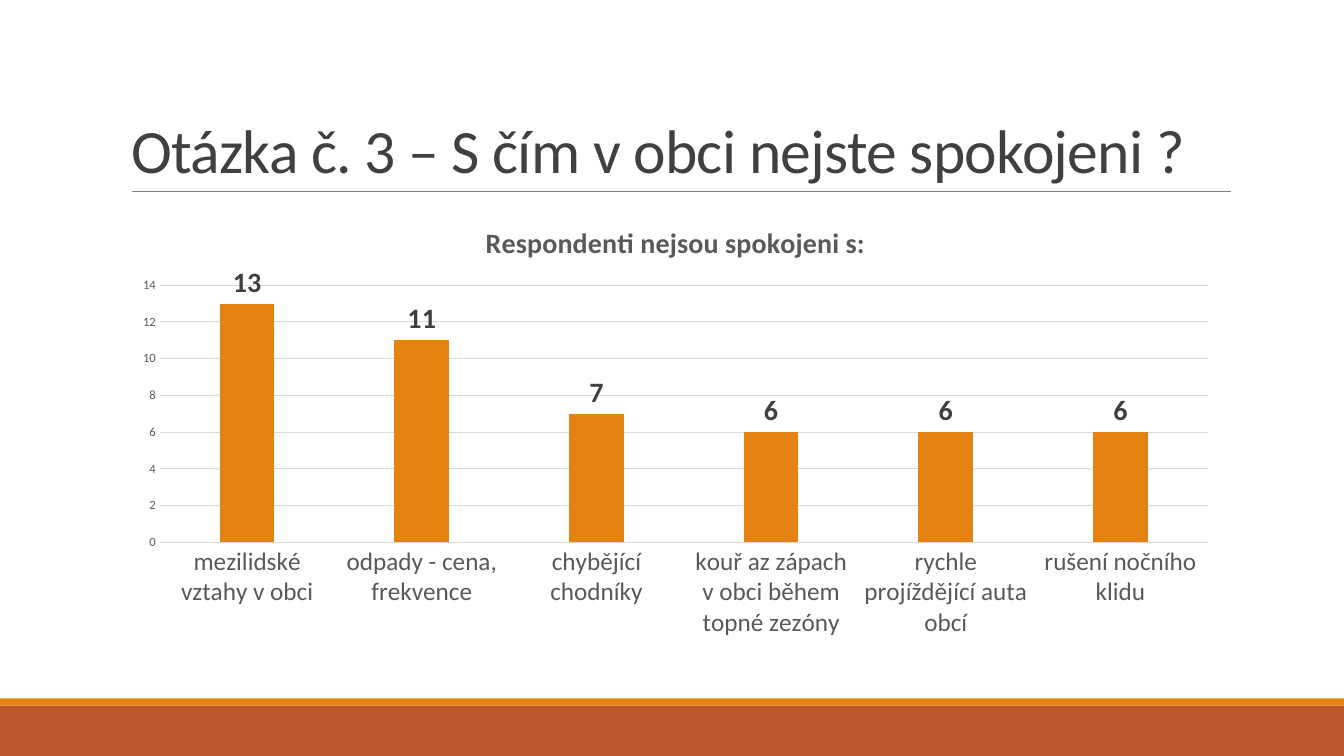
from lxml import etree
from pptx import Presentation
from pptx.chart.data import CategoryChartData
from pptx.dml.color import RGBColor
from pptx.enum.chart import XL_CHART_TYPE, XL_LABEL_POSITION, XL_TICK_MARK
from pptx.enum.shapes import MSO_CONNECTOR, MSO_SHAPE
from pptx.enum.text import MSO_ANCHOR, PP_ALIGN
from pptx.oxml import parse_xml
from pptx.oxml.ns import nsdecls, qn
from pptx.util import Inches, Pt

COLUMNS = XL_CHART_TYPE.COLUMN_CLUSTERED
OUTSIDE_END = XL_LABEL_POSITION.OUTSIDE_END
NO_TICKS = XL_TICK_MARK.NONE
RECTANGLE = MSO_SHAPE.RECTANGLE
STRAIGHT = MSO_CONNECTOR.STRAIGHT

ORANGE, RUST = "E48312", "BD582C"
DARK, GRAY, LIGHT, RULE = "404040", "595959", "D9D9D9", "808080"
LEFT, CONTENT_WIDTH = 1.2, 11
TITLE_TOP, TITLE_BOTTOM = 0.31, 1.9
SLIDE_WIDTH, SLIDE_HEIGHT = 13.33, 7.5

color = RGBColor.from_string


def format_font(font, size, hex_color, bold=False):
    font.name = "Calibri"
    font.size = Pt(size)
    font.bold = bold
    font.color.rgb = color(hex_color)


def write_text(text_frame, text, spacing=0, line_spacing=1.0, align=PP_ALIGN.LEFT, **font_format):
    """Fill the frame with one formatted paragraph; spacing is in points."""
    text_frame.text = text
    paragraph = text_frame.paragraphs[0]
    paragraph.alignment = align
    paragraph.line_spacing = line_spacing
    run = paragraph.runs[0]
    format_font(run.font, **font_format)
    if spacing:
        run.font._element.set("spc", str(round(spacing * 100)))


presentation = Presentation()
presentation.slide_width = Inches(SLIDE_WIDTH)
presentation.slide_height = Inches(SLIDE_HEIGHT)
slide = presentation.slides.add_slide(presentation.slide_layouts[5])

# Footer bands
for top, height, fill in ((7, 0.5, RUST), (6.93, 0.07, ORANGE)):
    band = slide.shapes.add_shape(
        RECTANGLE, 0, Inches(top), presentation.slide_width, Inches(height))
    band.shadow.inherit = False
    band.fill.solid()
    band.fill.fore_color.rgb = color(fill)
    band.line.fill.background()

# Title and its rule
rule_y = Inches(TITLE_BOTTOM)
rule = slide.shapes.add_connector(STRAIGHT, Inches(1.31), rule_y, Inches(12.21), rule_y)
rule.line.color.rgb = color(RULE)
rule.line.width = Pt(0.5)
etree.SubElement(rule._element.spPr, qn("a:effectLst"))

title = slide.shapes.title
title.left, title.top = Inches(LEFT), Inches(TITLE_TOP)
title.width, title.height = Inches(CONTENT_WIDTH), Inches(TITLE_BOTTOM - TITLE_TOP)
title.text_frame.vertical_anchor = MSO_ANCHOR.BOTTOM
title.text_frame.word_wrap = True
write_text(title.text_frame, "Otázka č. 3 – S čím v obci nejste spokojeni ?",
           size=44, hex_color=DARK, spacing=-0.5, line_spacing=0.85)

# Column chart
complaints = {
    "mezilidské vztahy v obci": 13,
    "odpady - cena, frekvence": 11,
    "chybějící chodníky": 7,
    "kouř az zápach v obci během topné zezóny": 6,
    "rychle projíždějící auta obcí": 6,
    "rušení nočního klidu": 6,
}
chart_data = CategoryChartData()
chart_data.categories = list(complaints)
chart_data.add_series("Series 1", list(complaints.values()))
chart = slide.shapes.add_chart(
    COLUMNS, Inches(LEFT), Inches(2.02), Inches(CONTENT_WIDTH), Inches(4.4), chart_data).chart
format_font(chart.font, 10, "000000")
chart.has_legend = False
chart.has_title = True
chart.chart_title.include_in_layout = False
write_text(chart.chart_title.text_frame, "Respondenti nejsou spokojeni s:",
           size=20, hex_color=GRAY, bold=True, align=PP_ALIGN.CENTER)

plot = chart.plots[0]
plot.gap_width = 219
plot.overlap = -27
plot.vary_by_categories = False
series = plot.series[0]
series.format.fill.solid()
series.format.fill.fore_color.rgb = color(ORANGE)

labels = series.data_labels
labels.show_value = True
labels.position = OUTSIDE_END
format_font(labels.font, 20, DARK, bold=True)

category_axis, value_axis = chart.category_axis, chart.value_axis
for axis, size in ((category_axis, 18), (value_axis, 9)):
    axis.major_tick_mark = axis.minor_tick_mark = NO_TICKS
    format_font(axis.tick_labels.font, size, GRAY)
value_axis.minimum_scale, value_axis.maximum_scale, value_axis.major_unit = 0, 14, 2
value_axis.format.line.fill.background()
value_axis.has_major_gridlines = True
for line in (category_axis.format.line, value_axis.major_gridlines.format.line):
    line.color.rgb = color(LIGHT)
    line.width = Pt(0.75)

# Inner plot area as shares of the chart
plot_area = chart._chartSpace.chart.plotArea
for layout in plot_area.findall(qn("c:layout")):
    plot_area.remove(layout)
shares = "".join(f'<c:{key} val="{share}"/>' for key, share in
                 (("x", 0.035), ("y", 0.184), ("w", 0.945), ("h", 0.58)))
plot_area.insert(0, parse_xml(
    f'<c:layout {nsdecls("c")}><c:manualLayout><c:layoutTarget val="inner"/>'
    f'<c:xMode val="edge"/><c:yMode val="edge"/>{shares}</c:manualLayout></c:layout>'))

presentation.save("out.pptx")
